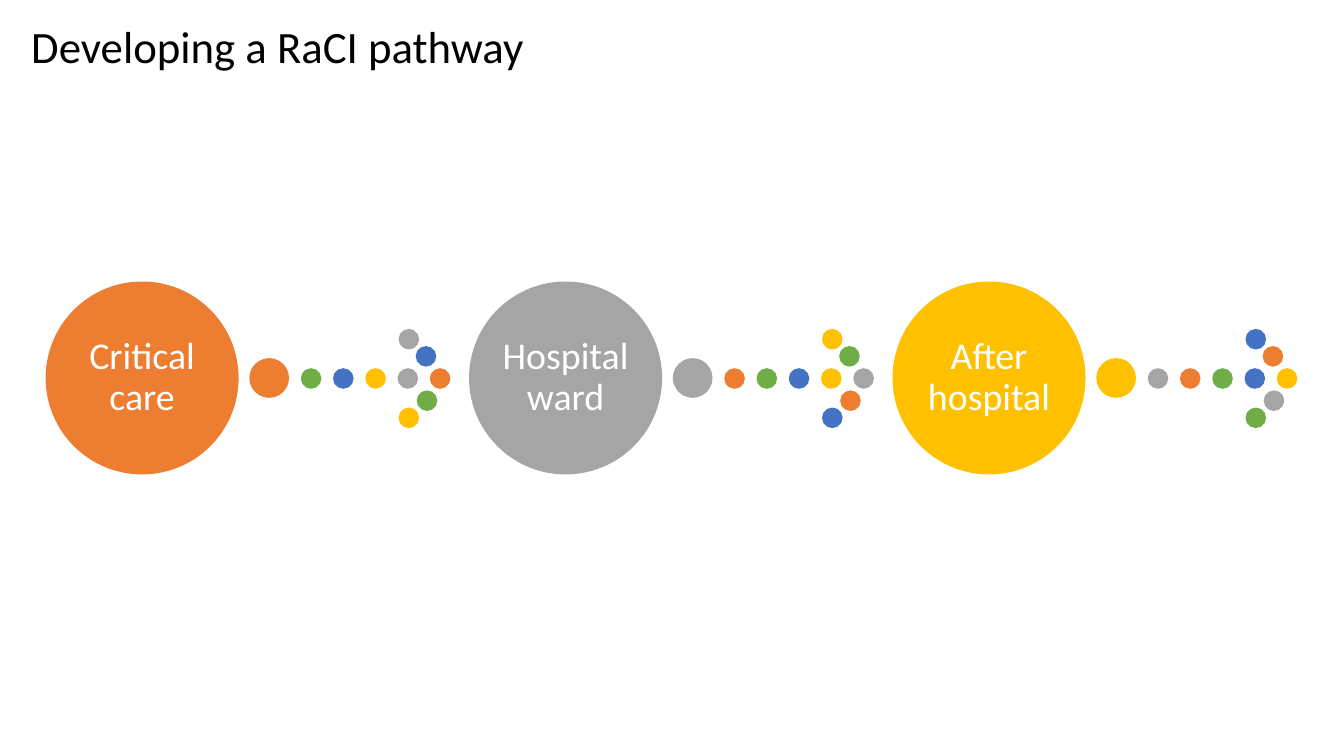
from pptx import Presentation
from pptx.dml.color import RGBColor
from pptx.enum.shapes import MSO_SHAPE
from pptx.enum.text import MSO_ANCHOR, MSO_AUTO_SIZE, PP_ALIGN
from pptx.util import Inches, Pt

FONT = "Calibri"
STAGES = ["Critical care", "Hospital ward", "After hospital"]
PALETTE = ["ED7D31", "A5A5A5", "FFC000", "4472C4", "70AD47"]
STAGE_PITCH = 4.2
CIRCLE_LEFT, CIRCLE_TOP, CIRCLE_SIZE = 0.46, 2.8, 1.9
DOT_SIZE, LARGE_DOT_SIZE = 0.19, 0.38

# Left, top and size of each dot in the first arrow; colours follow this order.
SHAFT = [(4.27 - 0.32 * step, 3.66, DOT_SIZE) for step in range(5)]
TAIL = [(2.48, 3.56, LARGE_DOT_SIZE)]
HEAD = [(left, top, DOT_SIZE) for left, top in
        [(3.96, 3.27), (3.96, 4.05), (4.13, 3.44), (4.14, 3.88)]]
ARROW_DOTS = SHAFT + TAIL + HEAD


def rgb(value):
    return RGBColor.from_string(value)


def style_text(para, size, color, alignment, spacing):
    para.alignment = alignment
    para.line_spacing = spacing
    para.font.name = FONT
    para.font.size = Pt(size)
    para.font.color.rgb = rgb(color)


def add_title(page, text):
    title = page.shapes.title
    title.left, title.top = Inches(0.21), Inches(0.14)
    title.width, title.height = Inches(8.03), Inches(0.64)
    frame = title.text_frame
    frame.text = text
    frame.auto_size = MSO_AUTO_SIZE.SHAPE_TO_FIT_TEXT
    frame.vertical_anchor = MSO_ANCHOR.TOP
    style_text(frame.paragraphs[0], 32, "000000", PP_ALIGN.LEFT, 1.0)


def add_circle(page, left, top, size, color):
    circle = page.shapes.add_shape(
        MSO_SHAPE.OVAL, Inches(left), Inches(top), Inches(size), Inches(size))
    circle.shadow.inherit = False
    circle.fill.solid()
    circle.fill.fore_color.rgb = rgb(color)
    circle.line.color.rgb = rgb(color)
    circle.line.width = Pt(1)
    return circle


def add_stage(page, index, label):
    """Add a labelled circle and the dotted arrow that follows it."""
    offset = index * STAGE_PITCH
    for number, (left, top, size) in enumerate(ARROW_DOTS):
        color = PALETTE[(index + number) % len(PALETTE)]
        add_circle(page, left + offset, top, size, color)

    circle = add_circle(page, CIRCLE_LEFT + offset, CIRCLE_TOP, CIRCLE_SIZE,
                        PALETTE[index])
    frame = circle.text_frame
    frame.text = label
    frame.word_wrap = True
    frame.vertical_anchor = MSO_ANCHOR.MIDDLE
    frame.margin_left = frame.margin_right = Inches(0.04)
    frame.margin_top = frame.margin_bottom = Inches(0.04)
    style_text(frame.paragraphs[0], 27, "FFFFFF", PP_ALIGN.CENTER, 0.9)


def main():
    deck = Presentation()
    deck.slide_width, deck.slide_height = Inches(13.33), Inches(7.5)
    page = deck.slides.add_slide(deck.slide_layouts.get_by_name("Title Only"))
    add_title(page, "Developing a RaCI pathway")
    for index, label in enumerate(STAGES):
        add_stage(page, index, label)
    deck.save("out.pptx")


if __name__ == "__main__":
    main()
